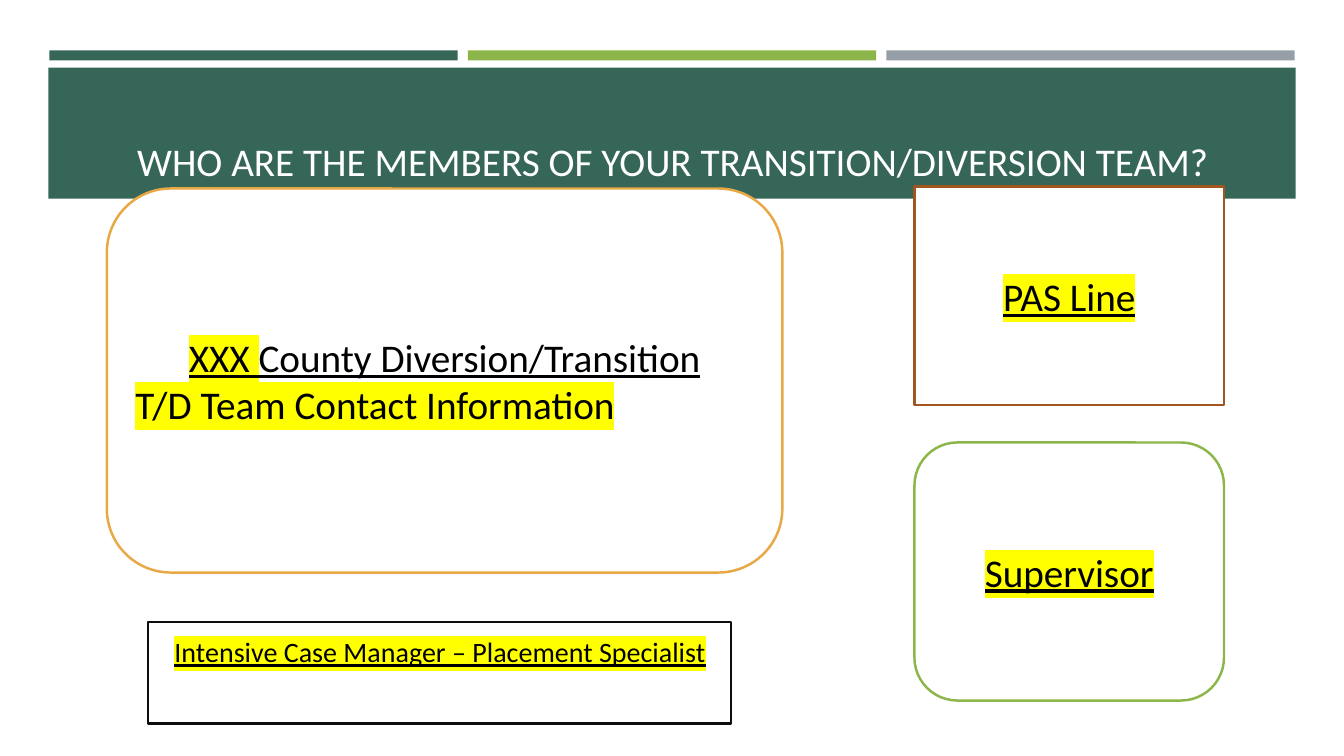
from lxml.etree import Element
from pptx import Presentation
from pptx.dml.color import RGBColor
from pptx.enum.shapes import MSO_SHAPE as Shape
from pptx.enum.text import MSO_ANCHOR as Anchor, PP_ALIGN as Align
from pptx.oxml import parse_xml
from pptx.oxml.ns import nsdecls, qn
from pptx.util import Inches, Pt

FONT, BLACK, WHITE, YELLOW = "Calibri", "000000", "FFFFFF", "FFFF00"
GREEN, LIME, GREY = "366658", "8CB64A", "969FA7"

TITLE = "WHO ARE THE MEMBERS OF YOUR TRANSITION/DIVERSION TEAM?"
STRIPES = [GREEN, LIME, GREY]
STRIPE_LEFT, STRIPE_WIDTH, STRIPE_STEP = 0.49, 4.05, 4.15
BANNER = (0.48, 0.67, 12.37, 1.3)
TITLE_BOX = (0.64, 0.77, 12.06, 1.11)

# Each line: alignment, then (text, underlined, highlighted) pieces.
CARDS = [
    (Shape.RECTANGLE, (9.07, 1.85, 3.07, 2.17), "A1561F",
     [(Align.CENTER, [("PAS Line", True, True)])]),
    (Shape.ROUNDED_RECTANGLE, (9.07, 4.39, 3.07, 2.56), LIME,
     [(Align.CENTER, [("Supervisor", True, True)])]),
    (Shape.ROUNDED_RECTANGLE, (1.06, 1.87, 6.7, 3.81), "E8A844",
     [(Align.CENTER, [("XXX ", True, True),
                      ("County Diversion/Transition", True, False)]),
      (Align.LEFT, [("T/D Team Contact Information", False, True)])]),
    (Shape.RECTANGLE, (1.47, 6.17, 5.78, 1.01), "0D0D0D", []),
]
MANAGER_BOX = (1.61, 6.25, 5.51, 0.44)
MANAGER = [(Align.CENTER,
            [("Intensive Case Manager – Placement Specialist", True, True)])]


def color(value):
    return RGBColor.from_string(value)


def inches(box):
    return [Inches(length) for length in box]


def apply(target, values):
    for name, value in values.items():
        setattr(target, name, value)


def add_shape(kind, box, fill, line=None):
    shape = slide.shapes.add_shape(kind, *inches(box))
    shape.shadow.inherit = False
    shape.fill.solid()
    shape.fill.fore_color.rgb = color(fill)
    if line:
        shape.line.color.rgb = color(line)
        shape.line.width = Pt(1.75)
    else:
        shape.line.fill.background()
    return shape


def add_run(paragraph, text, size, ink, underline=None, highlighted=False):
    run = paragraph.add_run()
    run.text = text
    apply(run.font, {"size": Pt(size), "name": FONT, "underline": underline})
    run.font.color.rgb = color(ink)
    if highlighted:
        marker = parse_xml(f'<a:highlight {nsdecls("a")}>'
                           f'<a:srgbClr val="{YELLOW}"/></a:highlight>')
        run.font._element.find(qn("a:latin")).addprevious(marker)


def write(frame, lines, size, anchor):
    apply(frame, {"word_wrap": True, "vertical_anchor": anchor})
    for index, (alignment, pieces) in enumerate(lines):
        paragraph = frame.add_paragraph() if index else frame.paragraphs[0]
        paragraph.alignment = alignment
        for text, underline, highlighted in pieces:
            add_run(paragraph, text, size, BLACK, underline, highlighted)


deck = Presentation()
apply(deck, {"slide_width": Inches(13.33), "slide_height": Inches(7.5)})
slide = deck.slides.add_slide(deck.slide_layouts[5])

for column, fill in enumerate(STRIPES):
    left = STRIPE_LEFT + column * STRIPE_STEP
    add_shape(Shape.RECTANGLE, (left, 0.5, STRIPE_WIDTH, 0.1), fill)
add_shape(Shape.RECTANGLE, BANNER, GREEN)

title = slide.shapes.title
slide.shapes._spTree.append(title._element)
apply(title, dict(zip(("left", "top", "width", "height"), inches(TITLE_BOX))))
apply(title.text_frame, {"word_wrap": True, "vertical_anchor": Anchor.BOTTOM})
heading = title.text_frame.paragraphs[0]
heading.alignment = Align.CENTER
add_run(heading, TITLE, 28, WHITE)

for kind, box, line, lines in CARDS:
    card = add_shape(kind, box, WHITE, line)
    write(card.text_frame, lines, 28, Anchor.MIDDLE)

manager = slide.shapes.add_textbox(*inches(MANAGER_BOX))
write(manager.text_frame, MANAGER, 20, Anchor.TOP)

deck.save("out.pptx")
